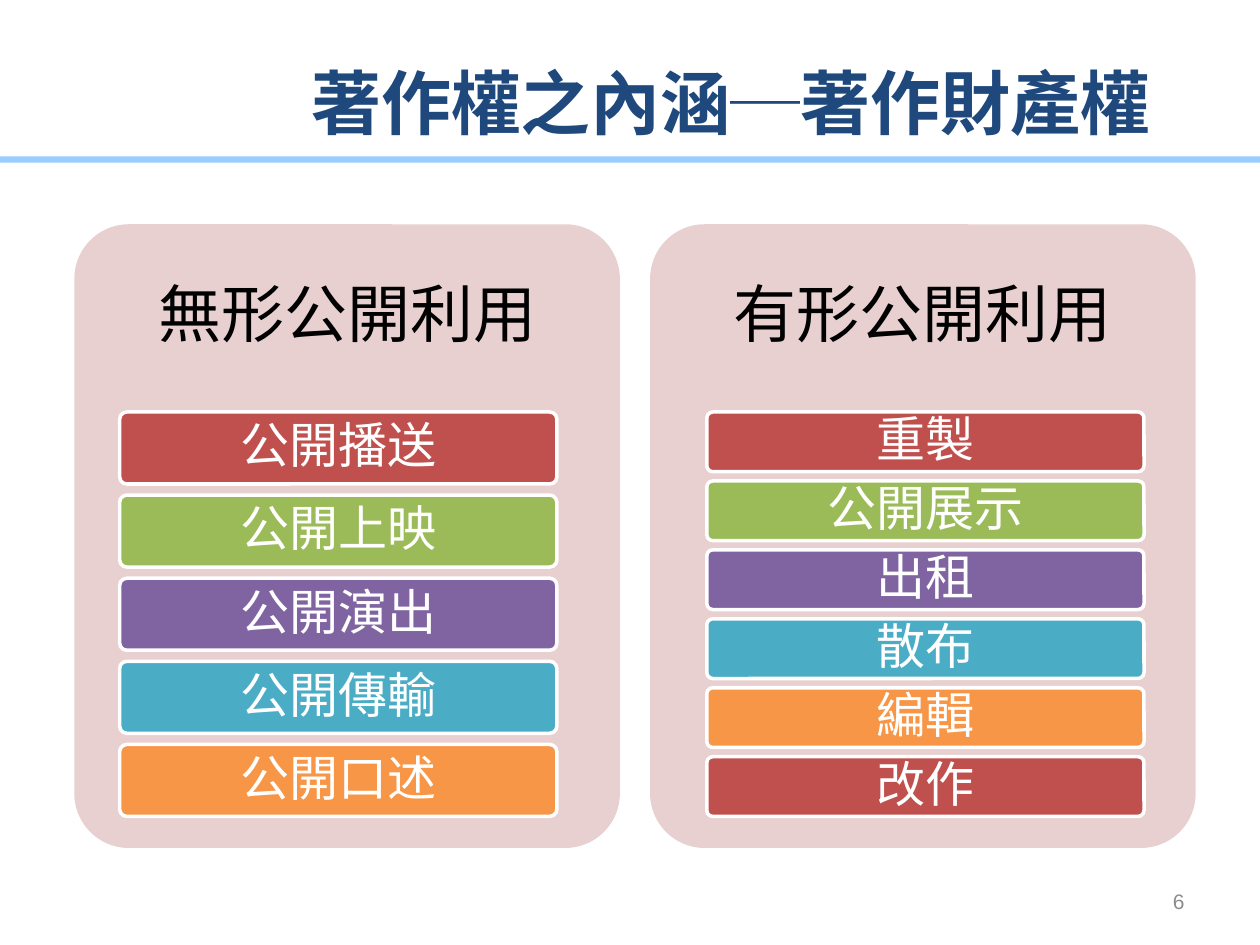
from lxml import etree
from pptx import Presentation
from pptx.dml.color import RGBColor
from pptx.enum import shapes, text
from pptx.oxml.ns import qn
from pptx.util import Inches, Pt

CJK = "Noto Sans CJK SC"
BAR_COLOURS = ["C0504D", "9BBB59", "8064A2", "4BACC6", "F79646"]
BARS_TOP, BARS_HEIGHT, GAP_RATIO = 3.27, 3.21, 0.154

# heading, panel left, bar left, rights listed
GROUPS = [
    ("無形公開利用", 0.59, 0.95,
     ["公開播送", "公開上映", "公開演出", "公開傳輸", "公開口述"]),
    ("有形公開利用", 5.16, 5.61,
     ["重製", "公開展示", "出租", "散布", "編輯", "改作"]),
]

prs = Presentation()
prs.slide_width, prs.slide_height = Inches(10), Inches(7.5)
slide = prs.slides.add_slide(prs.slide_layouts[6])


def write(box, words, size, colour, font=CJK, bold=False,
          align=text.PP_ALIGN.CENTER, inset=(0.1, 0.05), spacing=1.0):
    frame = box.text_frame
    frame.word_wrap = True
    frame.vertical_anchor = text.MSO_ANCHOR.MIDDLE
    frame.margin_left = frame.margin_right = Inches(inset[0])
    frame.margin_top = frame.margin_bottom = Inches(inset[1])
    para = frame.paragraphs[0]
    para.alignment = align
    para.line_spacing = spacing
    run = para.add_run()
    run.text = words
    run.font.size = Pt(size)
    run.font.bold = bold
    run.font.color.rgb = RGBColor.from_string(colour)
    run.font.name = font
    # East Asian typeface follows the Latin one
    etree.SubElement(run.font._element, qn("a:ea")).set("typeface", font)


def block(kind, left, top, width, height, fill, line=None):
    shape = slide.shapes.add_shape(
        kind, Inches(left), Inches(top), Inches(width), Inches(height))
    shape.shadow.inherit = False
    shape.fill.solid()
    shape.fill.fore_color.rgb = RGBColor.from_string(fill)
    if line:
        shape.line.color.rgb = RGBColor.from_string(line)
        shape.line.width = Pt(2)
    else:
        shape.line.fill.background()
    if kind == shapes.MSO_SHAPE.ROUNDED_RECTANGLE:
        shape.adjustments[0] = 0.1
    return shape


# Title and the rule under it
block(shapes.MSO_SHAPE.RECTANGLE, -0.04, 1.24, 10.06, 0.05, "99CCFF")
title = slide.shapes.add_textbox(
    Inches(1.93), Inches(0.36), Inches(7.74), Inches(0.89))
write(title, "著作權之內涵─著作財產權", 40, "1F497D", bold=True)

# Slide number
number = slide.shapes.add_textbox(
    Inches(7.17), Inches(6.95), Inches(2.33), Inches(0.4))
write(number, "6", 12, "8C8C8C", font="Arial", align=text.PP_ALIGN.RIGHT)

# Two panels, each with a heading and a stack of bars filling the same height
for heading, panel_left, bar_left, rights in GROUPS:
    block(shapes.MSO_SHAPE.ROUNDED_RECTANGLE,
          panel_left, 1.78, 4.33, 4.95, "E8D0D0")
    heading_box = slide.shapes.add_textbox(
        Inches(panel_left), Inches(1.78), Inches(4.33), Inches(1.48))
    write(heading_box, heading, 36, "000000", inset=(0.15, 0.15), spacing=0.9)

    count = len(rights)
    bar_height = BARS_HEIGHT / (count + (count - 1) * GAP_RATIO)
    for i, right in enumerate(rights):
        bar = block(shapes.MSO_SHAPE.ROUNDED_RECTANGLE, bar_left,
                    BARS_TOP + i * bar_height * (1 + GAP_RATIO), 3.47,
                    bar_height, BAR_COLOURS[i % len(BAR_COLOURS)], "FFFFFF")
        write(bar, right, 28, "FFFFFF", inset=(0.08, 0.06), spacing=0.9)

prs.save("out.pptx")
